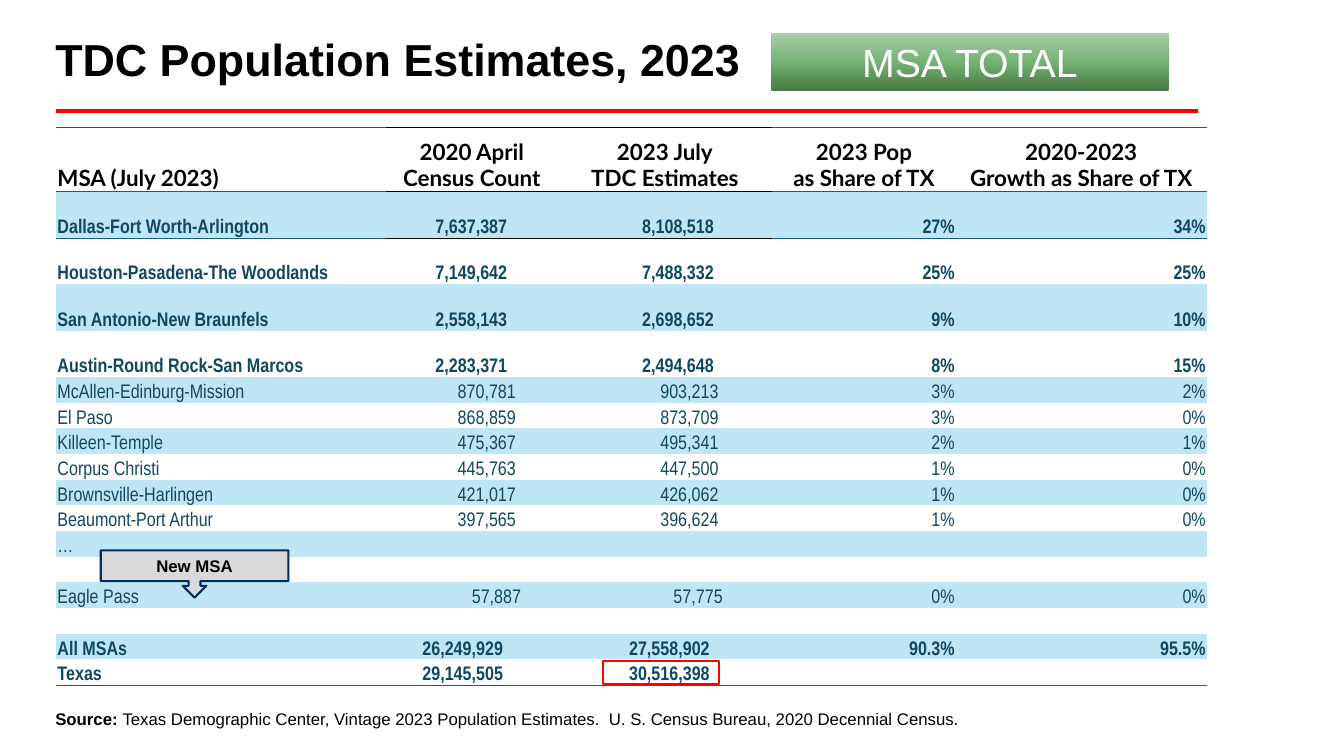
from copy import deepcopy

from pptx import Presentation
from pptx.dml.color import RGBColor
from pptx.enum import shapes, text
from pptx.oxml.ns import qn
from pptx.util import Inches, Pt
from lxml import etree

TEAL, NAVY, BAND, RED, BLACK = "156082", "104861", "C0E6F5", "FF0000", "000000"
NO_STYLE = "{2D5ABB26-0587-4C30-8999-92F81FD0307C}"
CENTER, RIGHT = text.PP_ALIGN.CENTER, text.PP_ALIGN.RIGHT

COLUMN_WIDTHS = [3.27, 1.7, 2.13, 1.82, 2.49]
TABLE_HEIGHT, HEADER_HEIGHT, METRO_HEIGHT = 5.54, 0.64, 0.46
HEADER = ["MSA (July 2023)", "2020 April\nCensus Count", "2023 July\vTDC Estimates",
          "2023 Pop\vas Share of TX", "2020-2023\vGrowth as Share of TX"]
METROS = [
    ["Dallas-Fort Worth-Arlington", "7,637,387", "8,108,518", "27%", "34%"],
    ["Houston-Pasadena-The Woodlands", "7,149,642", "7,488,332", "25%", "25%"],
    ["San Antonio-New Braunfels", "2,558,143", "2,698,652", "9%", "10%"],
    ["Austin-Round Rock-San Marcos", "2,283,371", "2,494,648", "8%", "15%"],
]
SMALLER = [
    ["McAllen-Edinburg-Mission", "870,781", "903,213", "3%", "2%"],
    ["El Paso", "868,859", "873,709", "3%", "0%"],
    ["Killeen-Temple", "475,367", "495,341", "2%", "1%"],
    ["Corpus Christi", "445,763", "447,500", "1%", "0%"],
    ["Brownsville-Harlingen", "421,017", "426,062", "1%", "0%"],
    ["Beaumont-Port Arthur", "397,565", "396,624", "1%", "0%"],
    ["…", "", "", "", ""],
    [""] * 5,
    ["Eagle Pass", "57,887", "57,775", "0%", "0%"],
    [""] * 5,
]
TOTALS = [
    ["All MSAs", "26,249,929", "27,558,902", "90.3%", "95.5%"],
    ["Texas", "29,145,505", "30,516,398", "", ""],
]
# Left indents of the 2020 and 2023 counts, by number of characters
COUNT_INDENTS = {10: (0.35, 0.7), 9: (0.48, 0.83), 7: (0.7, 1.01), 6: (0.84, 1.14)}


def rgb(value):
    return RGBColor.from_string(value)


def format_font(font, size, name, color, bold=False):
    font.size, font.name, font.bold = Pt(size), name, bold
    font.color.rgb = rgb(color)


def add_text(page, place, spans, size):
    """Add a text box from (wording, bold) spans."""
    box = page.shapes.add_textbox(*map(Inches, place))
    frame = box.text_frame
    frame.word_wrap = True
    frame.vertical_anchor = text.MSO_ANCHOR.MIDDLE
    para = frame.paragraphs[0]
    para.line_spacing = 0.9
    for wording, bold in spans:
        span = para.add_run()
        span.text = wording
        format_font(span.font, size, "Arial", BLACK, bold)


def add_box(page, kind, place, fill=None, line=None):
    shape = page.shapes.add_shape(kind, *map(Inches, place))
    shape.shadow.inherit = False
    if fill:
        shape.fill.solid()
        shape.fill.fore_color.rgb = rgb(fill)
    else:
        shape.fill.background()
    if line:
        shape.line.color.rgb = rgb(line)
        shape.line.width = Pt(1.5)
    else:
        shape.line.fill.background()
    return shape


def label_box(shape, wording, size, color, bold=False):
    frame = shape.text_frame
    frame.text = wording
    frame.vertical_anchor = text.MSO_ANCHOR.MIDDLE
    para = frame.paragraphs[0]
    para.alignment = CENTER
    format_font(para.runs[0].font, size, "Arial", color, bold)


def set_gradient(shape, stops):
    """Fill upwards with (percent, colour) stops."""
    shape.fill.gradient()
    shape.fill.gradient_angle = 90
    stop_list = shape._element.spPr.find(qn("a:gradFill")).find(qn("a:gsLst"))
    stop_list.append(deepcopy(stop_list[0]))
    for stop, (percent, color) in zip(shape.fill.gradient_stops, stops):
        stop.position = percent / 100
        stop.color.rgb = rgb(color)


def add_rule(page, left, right, top):
    rule = page.shapes.add_connector(shapes.MSO_CONNECTOR.STRAIGHT, Inches(left),
                                     Inches(top), Inches(right), Inches(top))
    rule.line.color.rgb = rgb(RED)
    rule.line.width = Pt(3)
    etree.SubElement(rule._element.spPr, qn("a:effectLst"))


def add_border(cell, side, color):
    line = etree.SubElement(cell._tc.get_or_add_tcPr(), qn("a:ln" + side), w=str(Pt(0.5)))
    solid = etree.SubElement(line, qn("a:solidFill"))
    etree.SubElement(solid, qn("a:srgbClr"), val=color)


def fill_cell(cell, wording, size, name, color, bold, alignment=None, indent=0):
    cell.margin_left = cell.margin_right = cell.margin_top = Inches(0.01)
    cell.margin_bottom = 0
    cell.vertical_anchor = text.MSO_ANCHOR.BOTTOM
    cell.text_frame.text = wording
    for para in cell.text_frame.paragraphs:
        para.alignment = alignment
        if indent:
            para._p.get_or_add_pPr().set("marL", str(Inches(indent)))
        for span in para.runs:
            format_font(span.font, size, name, color, bold)
        if not wording:
            etree.SubElement(para._p, qn("a:endParaRPr"), sz=str(size * 100))


def add_population_table(page):
    rows = [HEADER] + METROS + SMALLER + TOTALS
    frame = page.shapes.add_table(len(rows), len(COLUMN_WIDTHS), Inches(0.56), Inches(1.26),
                                  Inches(sum(COLUMN_WIDTHS)), Inches(TABLE_HEIGHT))
    table = frame.table
    table.first_row = table.horz_banding = False
    table._tbl.tblPr.find(qn("a:tableStyleId")).text = NO_STYLE
    for column, width in zip(table.columns, COLUMN_WIDTHS):
        column.width = Inches(width)

    plain_rows = len(SMALLER + TOTALS)
    plain_height = (TABLE_HEIGHT - HEADER_HEIGHT - METRO_HEIGHT * len(METROS)) / plain_rows
    heights = [HEADER_HEIGHT] + [METRO_HEIGHT] * len(METROS) + [plain_height] * plain_rows
    for r, (values, height) in enumerate(zip(rows, heights)):
        table.rows[r].height = Inches(height)
        for c, wording in enumerate(values):
            cell = table.cell(r, c)
            border = BLACK if c in (1, 2) else TEAL
            if r == 0:
                add_border(cell, "T", border)
                add_border(cell, "B", border)
                fill_cell(cell, wording, 16, "Lato", BLACK, True, CENTER if c else None)
            else:
                if r == 1:
                    add_border(cell, "T", border)
                if values is rows[-1]:
                    add_border(cell, "B", TEAL)
                indent = COUNT_INDENTS[len(wording)][c - 1] if c in (1, 2) and wording else 0
                fill_cell(cell, wording, 14, "Arial Narrow", NAVY, values not in SMALLER,
                          RIGHT if c > 2 else None, indent)
            if r % 2:
                cell.fill.solid()
                cell.fill.fore_color.rgb = rgb(BAND)
            else:
                cell.fill.background()


def main():
    deck = Presentation()
    deck.slide_width, deck.slide_height = Inches(13.33), Inches(7.5)
    page = deck.slides.add_slide(deck.slide_layouts[6])
    add_rule(page, 0.56, 11.88, 1.1)
    add_text(page, (0.45, 0.33, 7.2, 0.57), [("TDC Population Estimates, 2023", True)], 32)
    add_population_table(page)
    add_text(page, (0.45, 6.94, 10.35, 0.4), [
        ("Source: ", True),
        ("Texas Demographic Center, Vintage 2023 Population Estimates.  "
         "U. S. Census Bureau, 2020 Decennial Census.", False)], 12)

    kinds = shapes.MSO_SHAPE
    badge = add_box(page, kinds.RECTANGLE, (7.65, 0.33, 3.94, 0.57))
    set_gradient(badge, [(0, "467A44"), (48, "74B072"), (100, "A9CEA8")])
    label_box(badge, "MSA TOTAL", 28, "FFFFFF")
    callout = add_box(page, kinds.DOWN_ARROW_CALLOUT, (1, 5.46, 1.86, 0.47), "D9D9D9", "002D59")
    label_box(callout, "New MSA", 12, BLACK, True)
    add_box(page, kinds.RECTANGLE, (5.98, 6.56, 1.15, 0.23), line=RED)
    deck.save("out.pptx")


if __name__ == "__main__":
    main()
